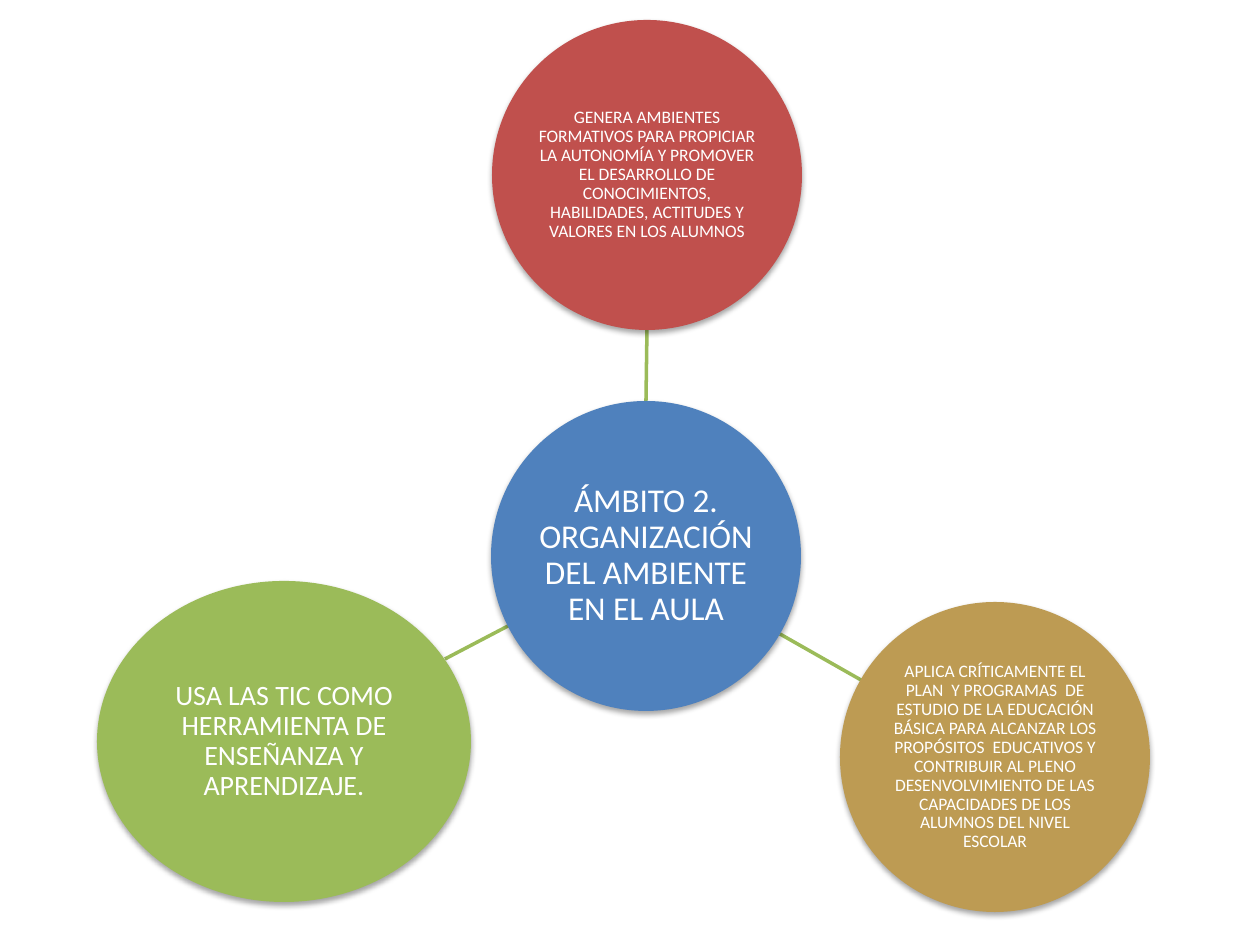
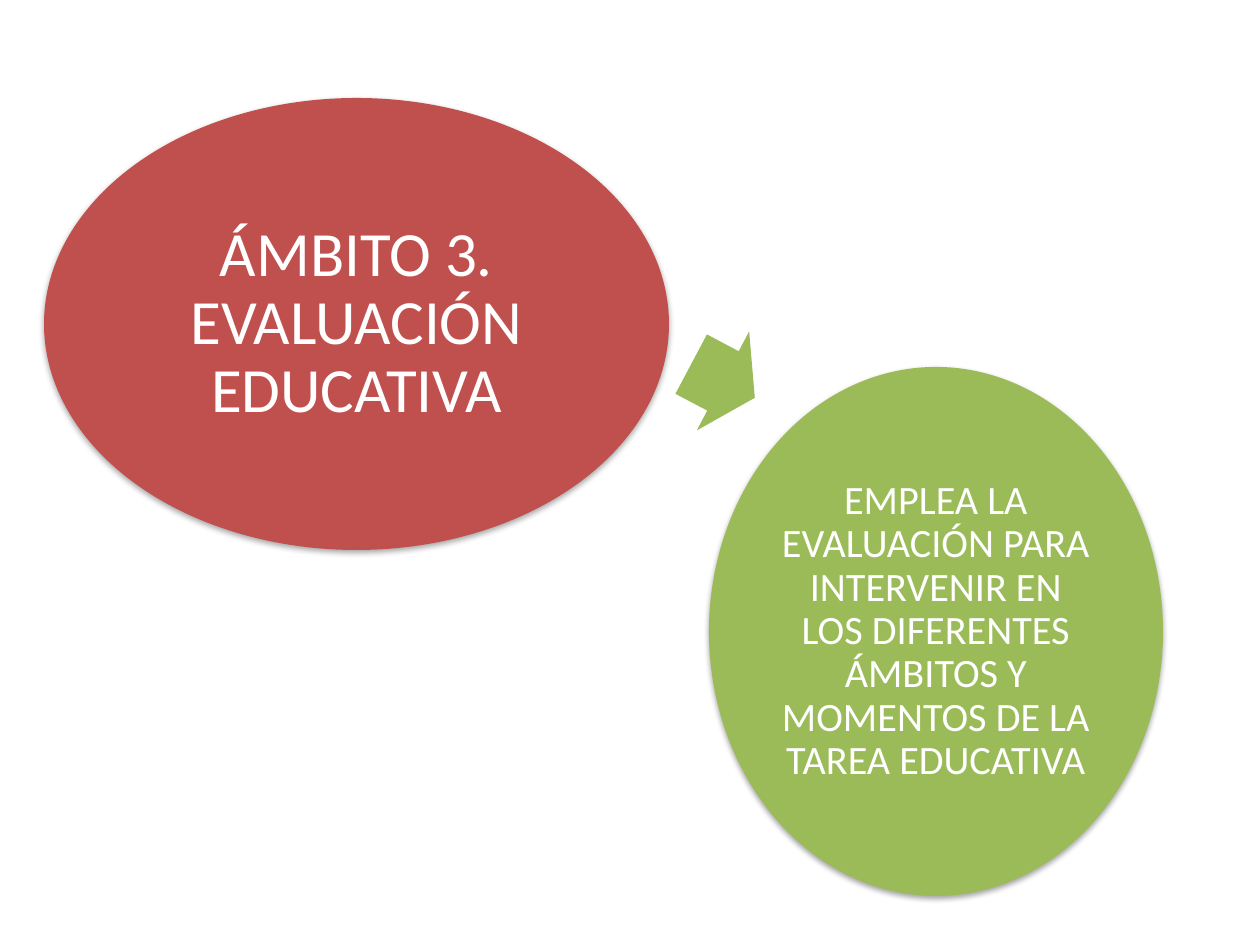
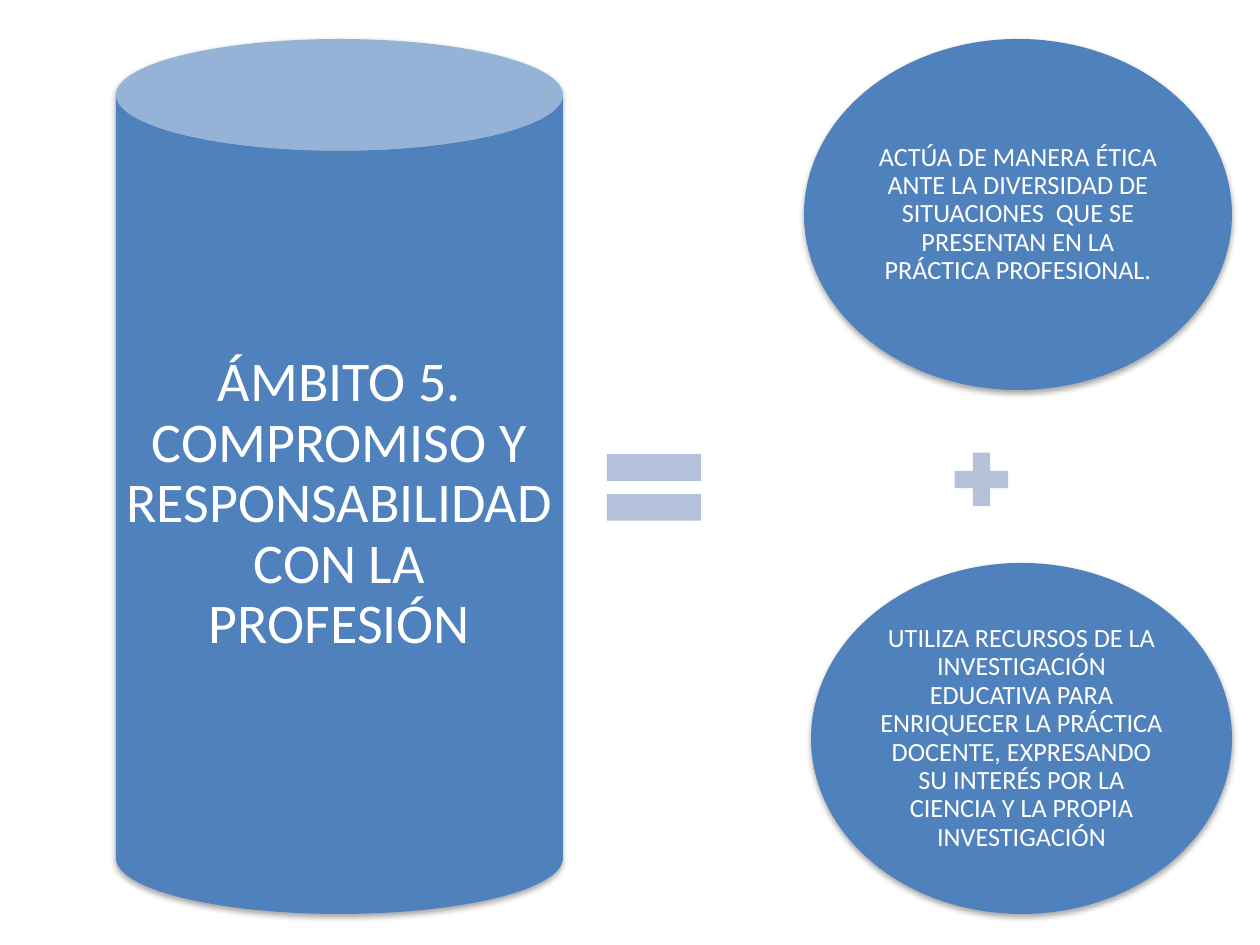
import pptx
import pptx.dml.color
import pptx.enum.shapes
import pptx.enum.text
import pptx.oxml
import pptx.oxml.ns
import pptx.util

SCALE = 914400 / 126  # EMU per px
FONT = "Calibri"
COLOURS = {
    "blue": "4F81BD",
    "red": "C0504D",
    "green": "9BBB59",
    "ochre": "BD9B53",
    "pale blue": "B3C1DB",
    "white": "FFFFFF",
}
SHADOW = (
    f'<a:effectLst {pptx.oxml.ns.nsdecls("a")}>'
    '<a:outerShdw blurRad="40000" dist="23000" dir="5400000" rotWithShape="0">'
    '<a:srgbClr val="000000"><a:alpha val="35000"/></a:srgbClr>'
    "</a:outerShdw></a:effectLst>"
)
SHAPES = pptx.enum.shapes.MSO_SHAPE


def add_symbol(slide, kind, box, colour):
    """Add a plain filled shape; box is left, top, width, height in px."""
    symbol = slide.shapes.add_shape(kind, *(round(n * SCALE) for n in box))
    symbol.fill.solid()
    symbol.fill.fore_color.rgb = pptx.dml.color.RGBColor.from_string(COLOURS[colour])
    symbol.line.fill.background()
    symbol.shadow.inherit = False
    return symbol


def add_idea(slide, kind, box, colour, size, inset, wording):
    """Add a filled shape with a soft shadow and centred white text."""
    idea = add_symbol(slide, kind, box, colour)
    properties = idea.element.spPr
    properties.remove(properties.find(pptx.oxml.ns.qn("a:effectLst")))
    properties.append(pptx.oxml.parse_xml(SHADOW))

    frame = idea.text_frame
    frame.word_wrap = True
    frame.vertical_anchor = pptx.enum.text.MSO_ANCHOR.MIDDLE
    frame.margin_left = frame.margin_right = round(inset * SCALE)
    frame.margin_top = frame.margin_bottom = round(inset * SCALE)
    paragraph = frame.paragraphs[0]
    paragraph.text = wording
    paragraph.alignment = pptx.enum.text.PP_ALIGN.CENTER
    paragraph.line_spacing = 0.9
    paragraph.font.name = FONT
    paragraph.font.size = pptx.util.Pt(size)
    paragraph.font.color.rgb = pptx.dml.color.RGBColor.from_string(COLOURS["white"])


deck = pptx.Presentation()
deck.slide_width = round(1260 * SCALE)
deck.slide_height = round(945 * SCALE)
blank = deck.slide_layouts[6]

# Slide 1: classroom environment, a hub with three spokes
classroom = deck.slides.add_slide(blank)
for spoke_ends in (
    (646, 401, 647, 330),
    (780, 634, 861, 680),
    (508, 626, 445, 659),
):
    spoke = classroom.shapes.add_connector(
        pptx.enum.shapes.MSO_CONNECTOR.STRAIGHT, *(round(n * SCALE) for n in spoke_ends)
    )
    spoke.line.color.rgb = pptx.dml.color.RGBColor.from_string(COLOURS["green"])
    spoke.line.width = pptx.util.Pt(2)
    spoke.element.spPr.append(
        pptx.oxml.parse_xml(f'<a:effectLst {pptx.oxml.ns.nsdecls("a")}/>')
    )

for box, colour, size, wording in (
    ((491, 401, 310, 310), "blue", 19,
     "ÁMBITO 2. ORGANIZACIÓN DEL AMBIENTE EN EL AULA"),
    ((492, 20, 310, 310), "red", 10,
     "GENERA AMBIENTES FORMATIVOS PARA PROPICIAR LA AUTONOMÍA Y PROMOVER "
     "EL DESARROLLO DE CONOCIMIENTOS, HABILIDADES, ACTITUDES Y VALORES EN LOS ALUMNOS"),
    ((840, 602, 310, 310), "ochre", 10,
     "APLICA CRÍTICAMENTE EL PLAN  Y PROGRAMAS  DE ESTUDIO DE LA EDUCACIÓN BÁSICA "
     "PARA ALCANZAR LOS PROPÓSITOS  EDUCATIVOS Y CONTRIBUIR AL PLENO "
     "DESENVOLVIMIENTO DE LAS CAPACIDADES DE LOS ALUMNOS DEL NIVEL ESCOLAR"),
    ((97, 581, 374, 321), "green", 16,
     "USA LAS TIC COMO HERRAMIENTA DE ENSEÑANZA Y APRENDIZAJE."),
):
    add_idea(classroom, SHAPES.OVAL, box, colour, size, 1, wording)

# Slide 2: educational assessment, one step leading to the next
assessment = deck.slides.add_slide(blank)
add_idea(assessment, SHAPES.OVAL, (44, 98, 625, 452), "red", 36, 6,
         "ÁMBITO 3. EVALUACIÓN EDUCATIVA")
step = add_symbol(assessment, SHAPES.RIGHT_ARROW, (687, 325, 72, 112), "green")
step.rotation = 27.9
step.adjustments[0] = 0.6
step.adjustments[1] = 0.5
add_idea(assessment, SHAPES.OVAL, (709, 367, 454, 529), "green", 23, 4,
         "EMPLEA LA EVALUACIÓN PARA INTERVENIR EN LOS DIFERENTES ÁMBITOS "
         "Y MOMENTOS DE LA TAREA EDUCATIVA")

# Slide 3: professional commitment as the sum of two practices
commitment = deck.slides.add_slide(blank)
add_idea(commitment, SHAPES.OVAL, (804, 39, 428, 351), "blue", 15, 3,
         "ACTÚA DE MANERA ÉTICA ANTE LA DIVERSIDAD DE SITUACIONES  QUE SE "
         "PRESENTAN EN LA PRÁCTICA PROFESIONAL.")
add_symbol(commitment, SHAPES.MATH_PLUS, (945, 443, 73, 73), "pale blue")
add_idea(commitment, SHAPES.OVAL, (811, 563, 421, 351), "blue", 15, 3,
         "UTILIZA RECURSOS DE LA INVESTIGACIÓN EDUCATIVA PARA ENRIQUECER LA "
         "PRÁCTICA DOCENTE, EXPRESANDO SU INTERÉS POR LA CIENCIA Y LA PROPIA "
         "INVESTIGACIÓN")
add_symbol(commitment, SHAPES.MATH_EQUAL, (590, 431, 128, 113), "pale blue")
add_idea(commitment, SHAPES.CAN, (116, 39, 447, 875), "blue", 32, 5,
         "ÁMBITO 5. COMPROMISO Y RESPONSABILIDAD CON LA PROFESIÓN")

deck.save("out.pptx")
